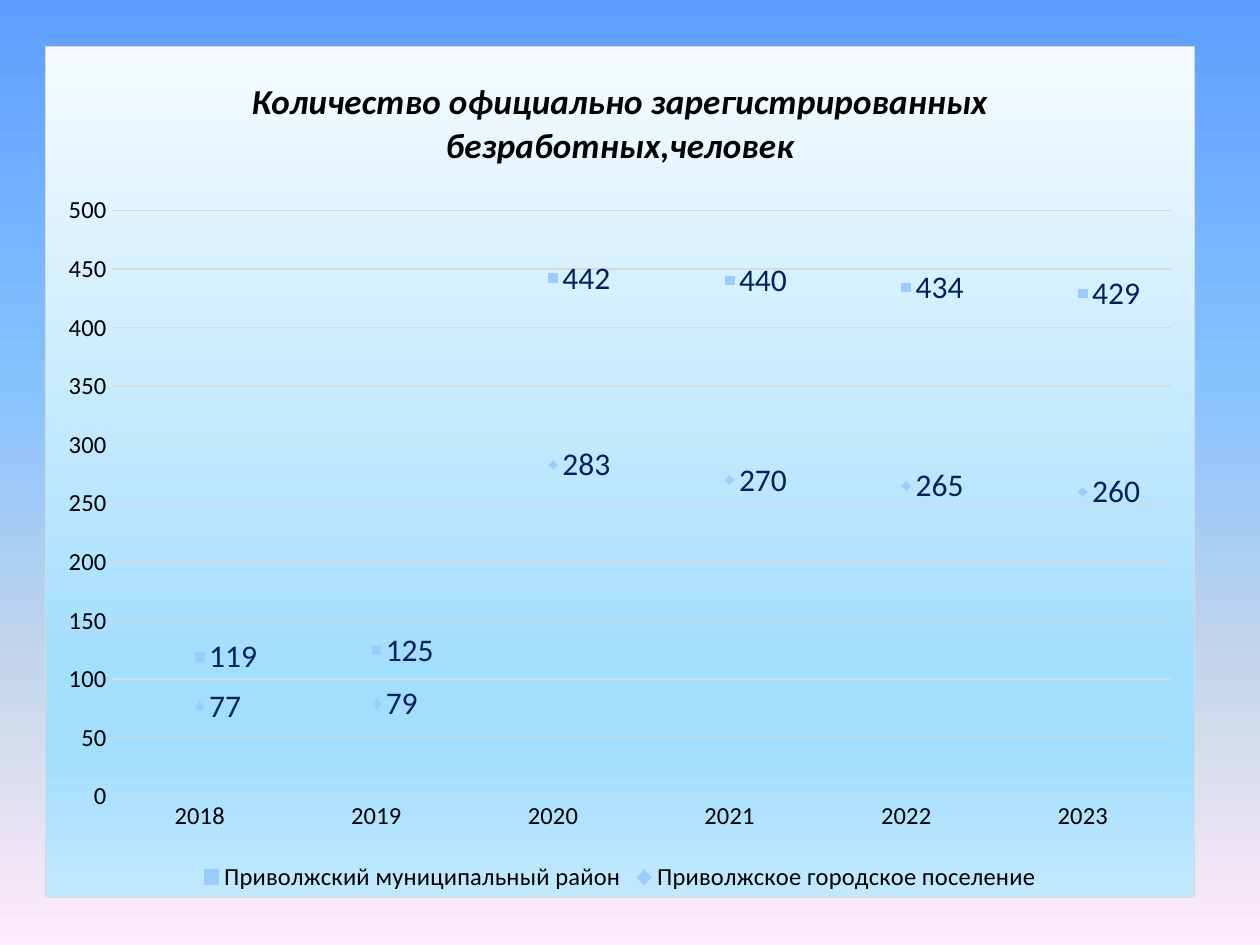
"""Build a slide with a marker chart of officially registered unemployed people."""
from lxml import etree
from pptx import Presentation
from pptx import util as u
from pptx.chart.data import CategoryChartData
from pptx.dml.color import RGBColor
from pptx.enum import chart as c
from pptx.oxml import parse_xml
from pptx.oxml.ns import nsdecls, qn

PX = 914400 // 126
BLACK = RGBColor(0x00, 0x00, 0x00)
NAVY = RGBColor(0x00, 0x20, 0x60)
GREY = RGBColor(0xD9, 0xD9, 0xD9)
MARKER_BLUE = RGBColor(0x99, 0xCC, 0xFF)
BACKGROUND_STOPS = [
    (0, RGBColor(0x5E, 0x9E, 0xFF)),
    (40, RGBColor(0x85, 0xC2, 0xFF)),
    (70, RGBColor(0xC4, 0xD6, 0xEB)),
    (100, RGBColor(0xFF, 0xEB, 0xFA)),
]
CHART_STOPS = [
    (0, RGBColor(0xF5, 0xFB, 0xFF)),
    (74, RGBColor(0xA2, 0xDE, 0xFE)),
    (83, RGBColor(0xA2, 0xDE, 0xFE)),
    (100, RGBColor(0xC1, 0xE9, 0xFE)),
]
SERIES = [
    ("Приволжский муниципальный район", (119, 125, 442, 440, 434, 429), c.XL_MARKER_STYLE.SQUARE),
    ("Приволжское городское поселение", (77, 79, 283, 270, 265, 260), c.XL_MARKER_STYLE.DIAMOND),
]


def vertical_gradient(stops):
    """Return a top-to-bottom gradient fill element."""
    stop_xml = "".join(
        f'<a:gs pos="{position * 1000}"><a:srgbClr val="{color}"/></a:gs>' for position, color in stops
    )
    return parse_xml(
        f'<a:gradFill {nsdecls("a")} rotWithShape="1"><a:gsLst>{stop_xml}</a:gsLst>'
        '<a:lin ang="5400000" scaled="0"/></a:gradFill>'
    )


def set_font(font, size, color=BLACK):
    """Apply the slide typeface with a size and colour."""
    font.name = "Calibri"
    font.size = u.Pt(size)
    font.color.rgb = color


presentation = Presentation()
presentation.slide_width = u.Inches(10)
presentation.slide_height = u.Inches(7.5)
slide = presentation.slides.add_slide(presentation.slide_layouts[6])

slide.background.fill.solid()
background = slide.element.find(".//" + qn("p:bgPr"))
background.replace(background[0], vertical_gradient(BACKGROUND_STOPS))

chart_data = CategoryChartData()
chart_data.categories = [str(year) for year in range(2018, 2024)]
for name, values, marker_style in SERIES:
    chart_data.add_series(name, values)
chart = slide.shapes.add_chart(
    c.XL_CHART_TYPE.LINE_MARKERS, 45 * PX, 46 * PX, 1150 * PX, 852 * PX, chart_data
).chart
set_font(chart.font, 10)

chart_frame = parse_xml(
    f'<c:spPr {nsdecls("c", "a")}><a:ln w="9525"><a:solidFill><a:srgbClr val="{GREY}"/>'
    "</a:solidFill></a:ln></c:spPr>"
)
chart_frame.insert(0, vertical_gradient(CHART_STOPS))
chart.element.find(qn("c:txPr")).addprevious(chart_frame)

chart.has_title = True
title = chart.chart_title
title.include_in_layout = False
title.text_frame.text = "Количество официально зарегистрированных безработных,человек"
title_font = title.text_frame.paragraphs[0].runs[0].font
set_font(title_font, 20)
title_font.bold = True
title_font.italic = True

chart.has_legend = True
chart.legend.position = c.XL_LEGEND_POSITION.BOTTOM
chart.legend.include_in_layout = False
set_font(chart.legend.font, 14)

for axis in (chart.category_axis, chart.value_axis):
    axis.major_tick_mark = c.XL_TICK_MARK.NONE
    axis.minor_tick_mark = c.XL_TICK_MARK.NONE
    set_font(axis.tick_labels.font, 14)
value_axis = chart.value_axis
value_axis.minimum_scale = 0
value_axis.maximum_scale = 500
value_axis.major_unit = 50
value_axis.format.line.fill.background()
for line in (chart.category_axis.format.line, value_axis.major_gridlines.format.line):
    line.color.rgb = GREY
    line.width = u.Pt(0.75)

for series, (name, values, marker_style) in zip(chart.plots[0].series, SERIES):
    series.smooth = False
    series.format.line.fill.background()
    series.marker.style = marker_style
    series.marker.size = 5
    series.marker.format.fill.solid()
    series.marker.format.fill.fore_color.rgb = MARKER_BLUE
    series.marker.format.line.fill.background()
    labels = series.data_labels
    labels.show_value = True
    labels.position = c.XL_LABEL_POSITION.RIGHT
    set_font(labels.font, 18, NAVY)
chart.plots[0].vary_by_categories = False

plot_area = chart.element.find(".//" + qn("c:plotArea"))
for old_layout in plot_area.findall(qn("c:layout")):
    plot_area.remove(old_layout)
layout = parse_xml(f'<c:layout {nsdecls("c")}><c:manualLayout/></c:layout>')
plot_area.insert(0, layout)
placement = [
    ("layoutTarget", "inner"), ("xMode", "edge"), ("yMode", "edge"),
    ("x", 66 / 1150), ("y", 164 / 852), ("w", 1061 / 1150), ("h", 587 / 852),
]
for tag, value in placement:
    etree.SubElement(layout[0], qn(f"c:{tag}")).set("val", str(value))

presentation.save("out.pptx")
